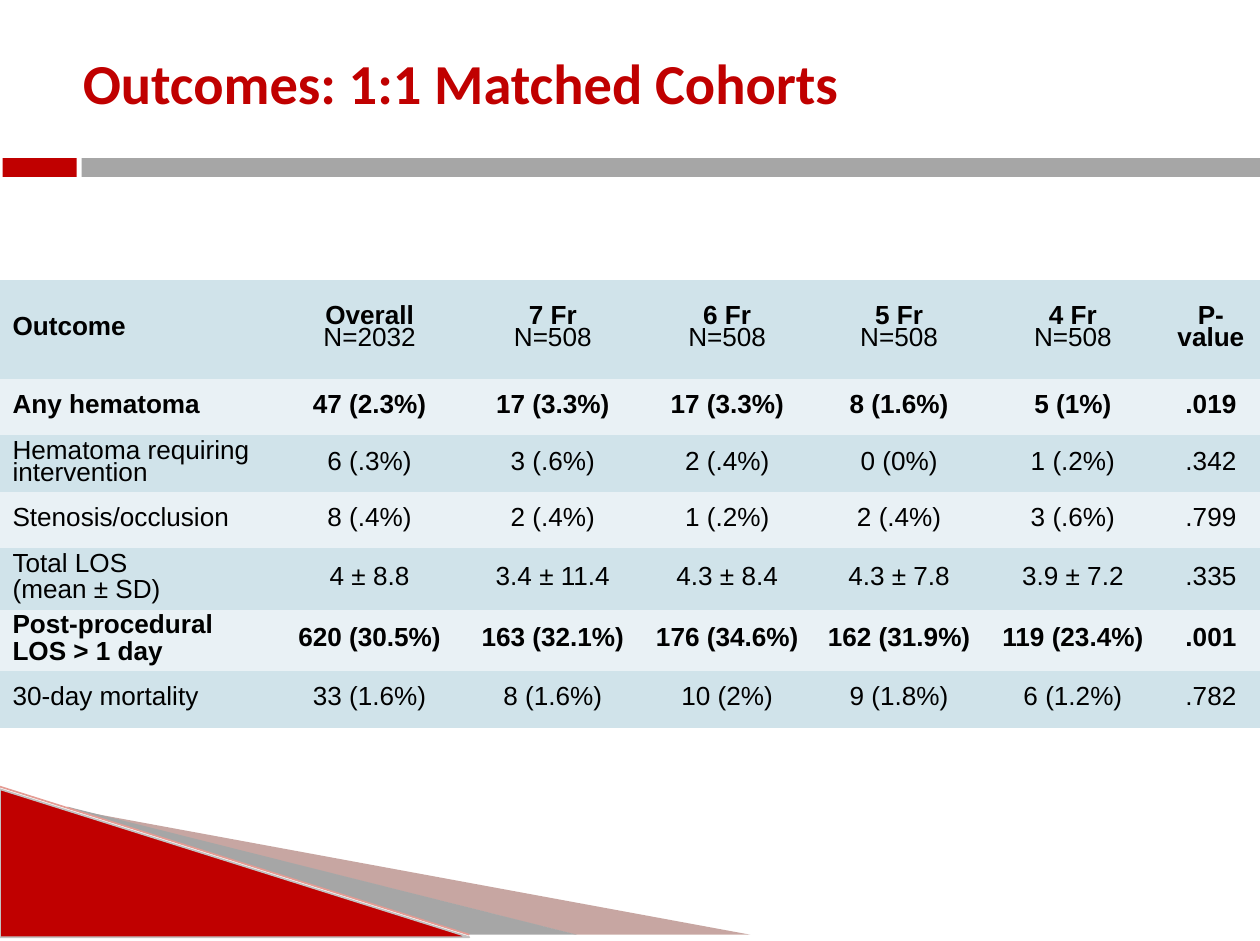
from lxml import etree
from pptx import Presentation
from pptx.dml.color import RGBColor
from pptx.enum import shapes, text
from pptx.oxml import ns
from pptx.util import Inches, Pt

TITLE = "Outcomes: 1:1 Matched Cohorts"
COHORTS = [("Overall", 2032), ("7 Fr", 508), ("6 Fr", 508), ("5 Fr", 508), ("4 Fr", 508)]
OUTCOMES = [
    (["Any hematoma"], ["47 (2.3%)", "17 (3.3%)", "17 (3.3%)", "8 (1.6%)", "5 (1%)", ".019"], True),
    (["Hematoma requiring intervention"],
     ["6 (.3%)", "3 (.6%)", "2 (.4%)", "0 (0%)", "1 (.2%)", ".342"], False),
    (["Stenosis/occlusion"], ["8 (.4%)", "2 (.4%)", "1 (.2%)", "2 (.4%)", "3 (.6%)", ".799"], False),
    (["Total LOS", "(mean ± SD)"],
     ["4 ± 8.8", "3.4 ± 11.4", "4.3 ± 8.4", "4.3 ± 7.8", "3.9 ± 7.2", ".335"], False),
    (["Post-procedural", "LOS > 1 day"],
     ["620 (30.5%)", "163 (32.1%)", "176 (34.6%)", "162 (31.9%)", "119 (23.4%)", ".001"], True),
    (["30-day mortality"], ["33 (1.6%)", "8 (1.6%)", "10 (2%)", "9 (1.8%)", "6 (1.2%)", ".782"], False),
]
COLUMN_WIDTHS = [2.18, 1.53, 1.39, 1.39, 1.35, 1.42, 0.78]
HEADER_HEIGHT, ROW_HEIGHT, TWO_LINE_HEIGHT = 0.79, 0.45, 0.49
TABLE_TOP = 2.23
SLIDE_WIDTH, SLIDE_HEIGHT = 10.04, 7.5
WEDGES = [
    ("rose", 40, [(0.56, 6.45), (5.98, 7.45), (4.59, 7.45), (0.56, 6.44)]),
    ("gray", 100, [(0.54, 6.43), (4.6, 7.45), (3.74, 7.45), (0.55, 6.44)]),
]
BLOCKS = [
    ("RIGHT_TRIANGLE", "red", "edge", (0, 6.29, 3.74, 1.18)),
    ("RECTANGLE", "red", None, (0.02, 1.26, 0.59, 0.15)),
    ("RECTANGLE", "gray", None, (0.65, 1.26, 9.39, 0.15)),
]
THEME = {
    "red": "C00000", "gray": "A6A6A6", "rose": "742217", "edge": "C3C1C1",
    "slope": "E59C94", "ink": "000000", "bands": ("D0E3EA", "E9F1F5"),
    "title_font": "Calibri", "title_size": 32.4, "table_font": "Arial", "table_size": 15,
}
NO_GRID_STYLE = "{2D5ABB26-0587-4C30-8999-92F81FD0307C}"


def rgb(name):
    return RGBColor.from_string(THEME[name])


def paint(part, fill, edge=None, opacity=100):
    part.shadow.inherit = False
    part.fill.solid()
    part.fill.fore_color.rgb = rgb(fill)
    if opacity < 100:
        color = part.fill._xPr.find(".//" + ns.qn("a:srgbClr"))
        etree.SubElement(color, ns.qn("a:alpha"), val=str(opacity * 1000))
    if edge:
        part.line.color.rgb = rgb(edge)
        part.line.width = Pt(1)
    else:
        part.line.fill.background()


def style(paragraph, kind, color, bold):
    font = paragraph.font
    font.name, font.size = THEME[kind + "_font"], Pt(THEME[kind + "_size"])
    font.color.rgb, font.bold = rgb(color), bold


def draw_decoration(slide):
    for fill, opacity, points in WEDGES:
        start, *rest = [(Inches(x), Inches(y)) for x, y in points]
        builder = slide.shapes.build_freeform(*start)
        builder.add_line_segments(rest, close=True)
        paint(builder.convert_to_shape(), fill, opacity=opacity)
    for preset, fill, edge, box in BLOCKS:
        block = slide.shapes.add_shape(shapes.MSO_SHAPE[preset], *map(Inches, box))
        paint(block, fill, edge)
        if preset == "RIGHT_TRIANGLE":
            ends = map(Inches, (0, 6.27, 3.74, 7.45))
            slope = slide.shapes.add_connector(shapes.MSO_CONNECTOR.STRAIGHT, *ends)
            slope.line.color.rgb = rgb("slope")
            slope.line.width = Pt(0.95)
            etree.SubElement(slope._element.spPr, ns.qn("a:effectLst"))


def draw_title(slide):
    title = slide.shapes.add_textbox(*map(Inches, (0.36, 0.21, 7, 0.89))).text_frame
    title.word_wrap = True
    title.vertical_anchor = text.MSO_ANCHOR.MIDDLE
    title.margin_left = Inches(0.3)
    title.paragraphs[0].text = TITLE
    style(title.paragraphs[0], "title", "red", True)


def fill_cell(cell, lines, band, bold, centered):
    cell.fill.solid()
    cell.fill.fore_color.rgb = RGBColor.from_string(THEME["bands"][band])
    cell.vertical_anchor = text.MSO_ANCHOR.MIDDLE
    cell.margin_left = cell.margin_right = Inches(0.1)
    cell.margin_top = cell.margin_bottom = Inches(0.03)
    cell.text_frame.text = "\n".join(lines)
    for index, paragraph in enumerate(cell.text_frame.paragraphs):
        paragraph.line_spacing = 0.75
        paragraph.space_before = Pt(1.4 if index else 0)
        paragraph.space_after = Pt(1.4)
        paragraph.alignment = text.PP_ALIGN.CENTER if centered else text.PP_ALIGN.LEFT
        style(paragraph, "table", "ink", bold)


def draw_table(slide):
    heights = [HEADER_HEIGHT] + [
        TWO_LINE_HEIGHT if len(label) > 1 else ROW_HEIGHT for label, _, _ in OUTCOMES]
    frame = slide.shapes.add_table(
        len(heights), len(COLUMN_WIDTHS), 0, Inches(TABLE_TOP),
        Inches(SLIDE_WIDTH), Inches(sum(heights)))
    table = frame.table
    table.first_row = table.horz_banding = False
    table._tbl.tblPr.find(ns.qn("a:tableStyleId")).text = NO_GRID_STYLE
    for column, width in zip(table.columns, COLUMN_WIDTHS):
        column.width = Inches(width)
    for row, height in zip(table.rows, heights):
        row.height = Inches(height)

    headings = ["Outcome"] + [name for name, _ in COHORTS] + ["P-value"]
    for column, heading in enumerate(headings):
        fill_cell(table.cell(0, column), [heading], 0, True, column > 0)
    for column, (_, size) in enumerate(COHORTS, 1):
        heading = table.cell(0, column).text_frame.paragraphs[0]
        heading.add_line_break()
        count = heading.add_run()
        count.text = f"N={size}"
        count.font.bold = False

    for row, (label, values, significant) in enumerate(OUTCOMES, 1):
        for column, lines in enumerate([label] + [[value] for value in values]):
            fill_cell(table.cell(row, column), lines, row % 2, significant, column > 0)


def main():
    deck = Presentation()
    deck.slide_width, deck.slide_height = Inches(SLIDE_WIDTH), Inches(SLIDE_HEIGHT)
    slide = deck.slides.add_slide(deck.slide_layouts[6])
    draw_decoration(slide)
    draw_title(slide)
    draw_table(slide)
    deck.save("out.pptx")


if __name__ == "__main__":
    main()
